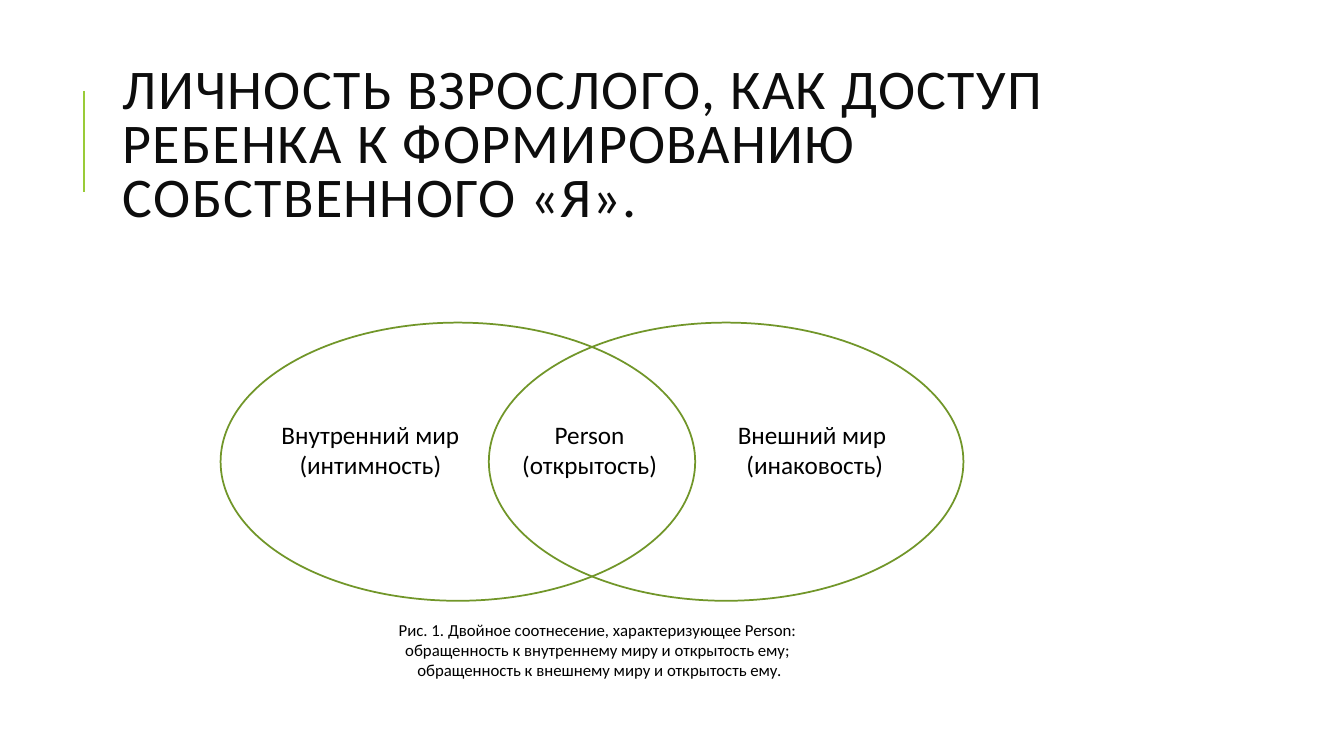
from lxml.etree import SubElement
from pptx import Presentation
from pptx.dml.color import RGBColor
from pptx.enum.shapes import MSO_CONNECTOR as Link, MSO_SHAPE as Form
from pptx.enum.text import MSO_ANCHOR as Anchor, PP_ALIGN as Align
from pptx.oxml.ns import qn
from pptx.util import Cm, Pt

FONT = "Calibri"
LABELS = [
    (1.25, 5.05, ["Внутренний мир", "(интимность)"]),
    (7.32, 3.96, ["Person", "(открытость)"]),
    (12.75, 4.45, ["Внешний мир ", "(инаковость)"]),
]
CAPTION = [
    "Рис. 1. Двойное соотнесение, характеризующее Person: ",
    "обращенность к внутреннему миру и открытость ему; ",
    "обращенность к внешнему миру и открытость ему.",
]


def paint(text):
    """Turn a hex string into a colour."""
    return RGBColor.from_string(text)


def write(slide, box, lines, size, tint="000000", align=Align.CENTER, wrap=False):
    """Add a text box with one paragraph per line and return its frame."""
    frame = slide.shapes.add_textbox(*map(Cm, box)).text_frame
    frame.word_wrap = wrap
    for n, line in enumerate(lines):
        para = frame.add_paragraph() if n else frame.paragraphs[0]
        para.alignment = align
        run = para.add_run()
        run.text = line
        run.font.name = FONT
        run.font.size = Pt(size)
        run.font.color.rgb = paint(tint)
    return frame


def header(slide, left, top, width, height):
    """Draw the accent rule and the title beside it."""
    x = Cm(left)
    rule = slide.shapes.add_connector(
        Link.STRAIGHT, x, Cm(top + 0.66), x, Cm(top + 3.2))
    rule.line.color.rgb = paint("99CB38")
    rule.line.width = Pt(1.5)
    SubElement(rule.element.spPr, qn("a:effectLst"))
    title = "ЛИЧНОСТЬ ВЗРОСЛОГО, КАК ДОСТУП РЕБЕНКА К ФОРМИРОВАНИЮ СОБСТВЕННОГО «Я»."
    frame = write(slide, (left + 0.73, top, width - 0.73, height), [title],
                  40, "0D0D0D", Align.LEFT, True)
    frame.vertical_anchor = Anchor.MIDDLE
    para = frame.paragraphs[0]
    para.line_spacing = 0.8
    para.runs[0].font._element.set("spc", "100")


def venn(slide, left, top, width, height):
    """Draw two crossing ovals and label their three zones."""
    span = 11.96
    for x in (left, left + width - span):
        oval = slide.shapes.add_shape(
            Form.OVAL, Cm(x), Cm(top), Cm(span), Cm(height))
        oval.shadow.inherit = False
        if x == left:
            oval.fill.solid()
            oval.fill.fore_color.rgb = paint("FFFFFF")
        else:
            oval.fill.background()
        oval.line.color.rgb = paint("719629")
        oval.line.width = Pt(1.25)
    for x, wide, lines in LABELS:
        write(slide, (left + x, top + 2.31, wide, 1.8), lines, 18)


def main():
    """Build the slide and save it."""
    deck = Presentation()
    deck.slide_width, deck.slide_height = Cm(33.87), Cm(19.05)
    slide = deck.slides.add_slide(deck.slide_layouts[6])
    header(slide, 2.11, 1.63, 27.73, 4.17)
    venn(slide, 5.56, 8.13, 18.72, 7.01)
    write(slide, (6.12, 15.49, 17.98, 2.57), CAPTION, 12)
    deck.save("out.pptx")


if __name__ == "__main__":
    main()
